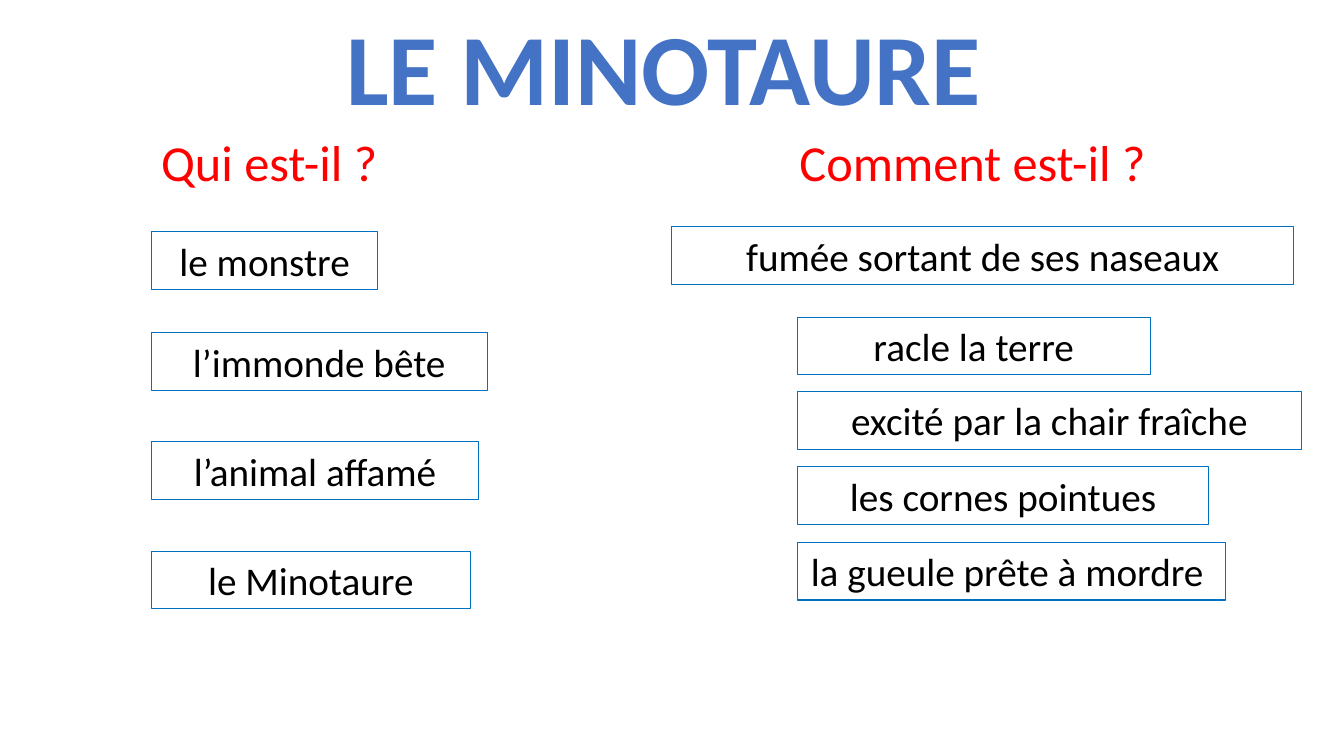
from dataclasses import dataclass

from pptx import Presentation
from pptx.dml.color import RGBColor
from pptx.enum.shapes import MSO_SHAPE
from pptx.enum.text import MSO_ANCHOR, MSO_AUTO_SIZE, PP_ALIGN
from pptx.util import Pt

RECTANGLE = MSO_SHAPE.RECTANGLE
CENTER, LEFT = PP_ALIGN.CENTER, PP_ALIGN.LEFT
TOP, MIDDLE = MSO_ANCHOR.TOP, MSO_ANCHOR.MIDDLE
GROW = MSO_AUTO_SIZE.SHAPE_TO_FIT_TEXT

FONT = "Calibri"
TITLE_BLUE = RGBColor(0x44, 0x72, 0xC4)
BORDER_BLUE = RGBColor(0x00, 0x70, 0xC0)
RED = RGBColor(0xFF, 0x00, 0x00)
BLACK = RGBColor(0x00, 0x00, 0x00)

TITLE_ONLY = 5
LABEL_HEIGHT = 41.2
HEADING_TOP, HEADING_HEIGHT = 90, 50.9
WHO_LEFT, HOW_LEFT = 108, 569.5


@dataclass(frozen=True)
class Heading:
    text: str
    left: float
    width: float


@dataclass(frozen=True)
class Label:
    text: str
    left: float
    top: float
    width: float


HEADINGS = [
    Heading("Qui est-il ?", WHO_LEFT, 210),
    Heading("Comment est-il ?", 564, 288),
]

LABELS = [
    Label("le monstre", WHO_LEFT, 165.5, 162),
    Label("l’immonde bête", WHO_LEFT, 237.5, 240),
    Label("l’animal affamé", WHO_LEFT, 315.5, 234),
    Label("le Minotaure", WHO_LEFT, 393.8, 228),
    Label("fumée sortant de ses naseaux", 480, 162, 443.8),
    Label("racle la terre", HOW_LEFT, 226.6, 252),
    Label("excité par la chair fraîche", HOW_LEFT, 279.6, 360),
    Label("les cornes pointues", HOW_LEFT, 333.5, 294),
    Label("la gueule prête à mordre ", HOW_LEFT, 387.4, 306),
]


def write(sp, text: str, size: float, color: RGBColor,
          align=CENTER, anchor=TOP, bold: bool = False) -> None:
    tf = sp.text_frame
    tf.word_wrap = True
    tf.auto_size = GROW
    tf.vertical_anchor = anchor
    p = tf.paragraphs[0]
    p.text = text
    p.alignment = align
    p.font.name = FONT
    p.font.size = Pt(size)
    p.font.bold = bold
    p.font.color.rgb = color


def add_title(s) -> None:
    sp = s.shapes.title
    sp.left, sp.top, sp.width, sp.height = Pt(222), Pt(0), Pt(504), Pt(94.5)
    write(sp, "LE MINOTAURE", 72, TITLE_BLUE, bold=True)


def add_heading(s, heading: Heading) -> None:
    sp = s.shapes.add_textbox(Pt(heading.left), Pt(HEADING_TOP),
                              Pt(heading.width), Pt(HEADING_HEIGHT))
    write(sp, heading.text, 36, RED, align=LEFT)


def add_label(s, label: Label) -> None:
    sp = s.shapes.add_shape(RECTANGLE, Pt(label.left), Pt(label.top),
                            Pt(label.width), Pt(LABEL_HEIGHT))
    sp.shadow.inherit = False
    sp.fill.background()
    sp.line.color.rgb = BORDER_BLUE
    sp.line.width = Pt(0.75)
    write(sp, label.text, 28, BLACK, anchor=MIDDLE)


def main() -> None:
    prs = Presentation()
    prs.slide_width, prs.slide_height = Pt(960), Pt(540)
    s = prs.slides.add_slide(prs.slide_layouts[TITLE_ONLY])
    add_title(s)
    for heading in HEADINGS:
        add_heading(s, heading)
    for label in LABELS:
        add_label(s, label)
    prs.save("out.pptx")


if __name__ == "__main__":
    main()
